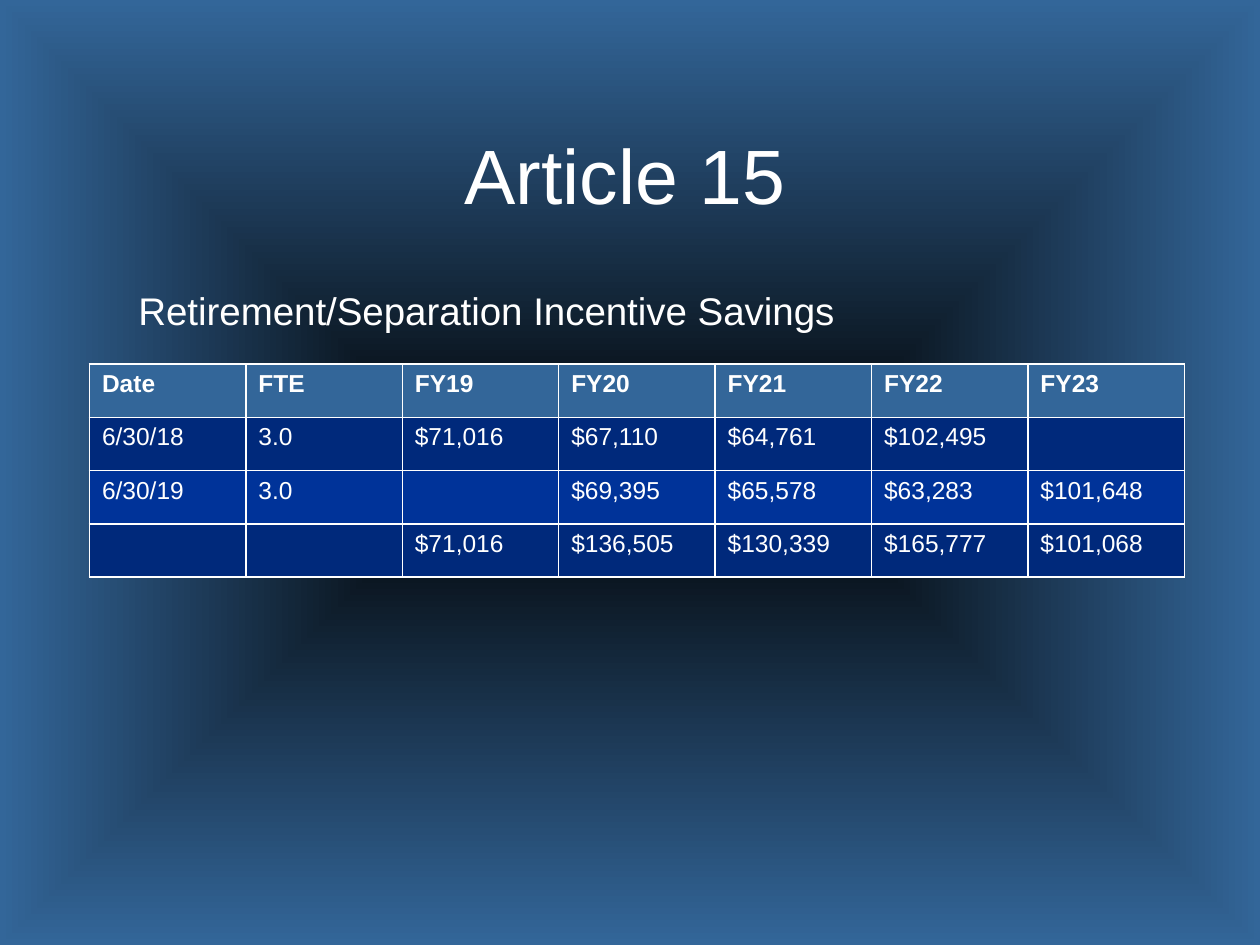
"""Build the Article 15 slide with its table of incentive savings."""
from dataclasses import dataclass

from lxml.etree import SubElement
from pptx import Presentation
from pptx.dml.color import RGBColor
from pptx.enum.text import MSO_ANCHOR as Anchor, PP_ALIGN as Align
from pptx.oxml import parse_xml
from pptx.oxml.ns import nsdecls, qn
from pptx.util import Pt

WHITE, BLACK, STEEL, NAVY, ROYAL = "FFFFFF", "000000", "336699", "00297B", "003399"
FONT = "Arial"
COLUMN_WIDTH, ROW_HEIGHT = 89.38, 30.42
TABLE_LEFT, TABLE_TOP = 51.12, 208.08


@dataclass
class TableRow:
    values: list[str]
    fill: str
    bold: bool = False


ROWS = [
    TableRow(["Date", "FTE", "FY19", "FY20", "FY21", "FY22", "FY23"], STEEL, True),
    TableRow(["6/30/18", "3.0", "$71,016", "$67,110", "$64,761", "$102,495", ""], NAVY),
    TableRow(["6/30/19", "3.0", "", "$69,395", "$65,578", "$63,283", "$101,648"], ROYAL),
    TableRow(["", "", "$71,016", "$136,505", "$130,339", "$165,777", "$101,068"], NAVY),
]


def color(value: str) -> RGBColor:
    return RGBColor.from_string(value)


def write(frame, text: str, size: float, bold: bool = False, align=Align.LEFT) -> None:
    frame.word_wrap = True
    para = frame.paragraphs[0]
    para.text = text
    para.alignment = align
    para.font.name = FONT
    para.font.size = Pt(size)
    para.font.bold = bold
    para.font.color.rgb = color(WHITE)


def paint_background(page, center: str, edge: str) -> None:
    background = parse_xml(
        f'<p:bg {nsdecls("p", "a")}><p:bgPr><a:gradFill rotWithShape="0"><a:gsLst>'
        f'<a:gs pos="0"><a:srgbClr val="{center}"/></a:gs>'
        f'<a:gs pos="100000"><a:srgbClr val="{edge}"/></a:gs></a:gsLst>'
        '<a:path path="shape"><a:fillToRect l="50000" t="50000" r="50000" b="50000"/></a:path>'
        '</a:gradFill><a:effectLst/></p:bgPr></p:bg>'
    )
    page.element.find(qn("p:cSld")).insert(0, background)


def outline_cell(cell, line_color: str, width: float) -> None:
    properties = cell._tc.get_or_add_tcPr()
    for index, side in enumerate(("lnL", "lnR", "lnT", "lnB")):
        line = properties.makeelement(qn(f"a:{side}"), {"w": str(Pt(width))})
        fill = SubElement(line, qn("a:solidFill"))
        SubElement(fill, qn("a:srgbClr"), val=line_color)
        properties.insert(index, line)


def add_savings_table(page, rows: list[TableRow]) -> None:
    count = len(rows[0].values)
    table = page.shapes.add_table(
        len(rows), count, Pt(TABLE_LEFT), Pt(TABLE_TOP),
        Pt(COLUMN_WIDTH * count), Pt(ROW_HEIGHT * len(rows)),
    ).table
    for column in table.columns:
        column.width = Pt(COLUMN_WIDTH)
    for table_row, row in zip(table.rows, rows):
        table_row.height = Pt(ROW_HEIGHT)
        for cell, value in zip(table_row.cells, row.values):
            cell.fill.solid()
            cell.fill.fore_color.rgb = color(row.fill)
            outline_cell(cell, WHITE, 1)
            write(cell.text_frame, value, 14, row.bold)


def main() -> None:
    deck = Presentation()
    deck.slide_width, deck.slide_height = Pt(720), Pt(540)
    page = deck.slides.add_slide(deck.slide_layouts[5])
    paint_background(page, BLACK, STEEL)

    title = page.shapes.title
    title.left, title.top, title.width, title.height = Pt(72), Pt(66.24), Pt(570.24), Pt(66.24)
    title.text_frame.vertical_anchor = Anchor.MIDDLE
    write(title.text_frame, "Article 15", 44, align=Align.CENTER)

    box = page.shapes.add_textbox(Pt(72), Pt(160.56), Pt(570.96), Pt(316.08))
    write(box.text_frame, "Retirement/Separation Incentive Savings", 22)

    add_savings_table(page, ROWS)
    deck.save("out.pptx")


if __name__ == "__main__":
    main()
